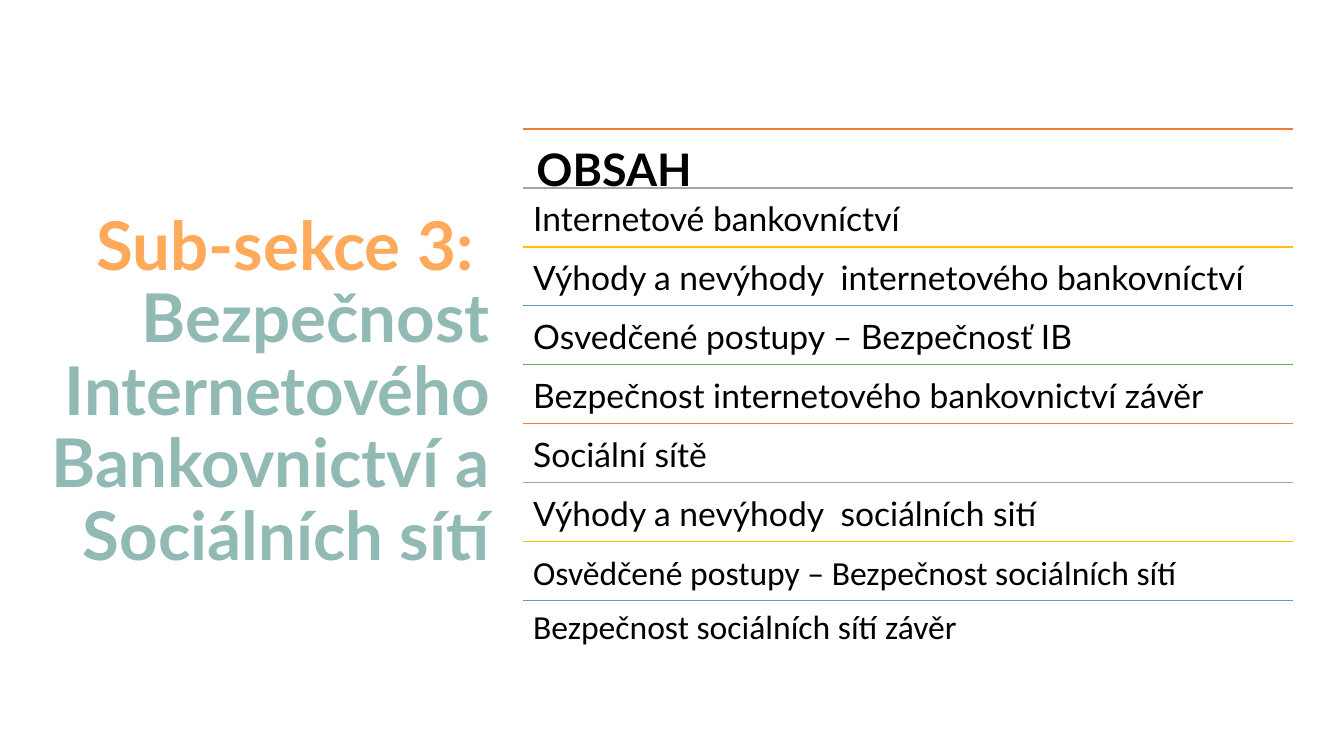
from lxml import etree
from pptx import Presentation
from pptx.dml.color import RGBColor
from pptx.enum.shapes import MSO_CONNECTOR
from pptx.enum.text import MSO_ANCHOR, MSO_AUTO_SIZE, PP_ALIGN
from pptx.oxml.ns import qn
from pptx.util import Inches, Pt

STRAIGHT = MSO_CONNECTOR.STRAIGHT
TOP, MIDDLE = MSO_ANCHOR.TOP, MSO_ANCHOR.MIDDLE
NO_FIT = MSO_AUTO_SIZE.NONE
LEFT, RIGHT = PP_ALIGN.LEFT, PP_ALIGN.RIGHT
TITLE_ONLY = 5

ORANGE, SAGE, BLACK = "FFAA5A", "92BAB5", "000000"
RULE_COLOURS = ["ED7D31", "A5A5A5", "FFC000", "5B9BD5", "70AD47"]

# Contents rows: text, font, size, inset, line spacing
HEADING = ("OBSAH", "Lato", 32, 0.13, 1.0)
TOPICS = [
    ("Internetové bankovníctví", "Lato", 24, 0.1, 1.0),
    ("Výhody a nevýhody  internetového bankovníctví", "Lato", 24, 0.1, 1.0),
    ("Osvedčené postupy – Bezpečnosť IB", "Lato", 24, 0.1, 1.0),
    ("Bezpečnost internetového bankovnictví závěr", "Lato", 24, 0.1, 1.0),
    ("Sociální sítě", "Lato", 24, 0.1, 1.0),
    ("Výhody a nevýhody  sociálních sití", "Lato", 24, 0.1, 1.0),
    ("Osvědčené postupy – Bezpečnost sociálních sítí", "Calibri", 24, 0.1, 1.0),
    ("Bezpečnost sociálních sítí závěr", "Calibri", 24, 0.1, 0.9),
]
LIST_LEFT, LIST_TOP, LIST_WIDTH = 5.19, 1.28, 7.63
ROW_HEIGHT = 5.26 / len([HEADING] + TOPICS)


def colour(hex_text):
    return RGBColor.from_string(hex_text)


def apply(target, values):
    for name, value in values.items():
        setattr(target, name, value)


class SlideBuilder:
    def __init__(self, page):
        self.page = page

    def add_span(self, para, text, font, size, ink, bold=False):
        span = para.add_run()
        span.text = text
        apply(span.font, {"name": font, "size": Pt(size), "bold": bold})
        span.font.color.rgb = colour(ink)

    def title(self, lead, rest, left, top, width, height):
        box = self.page.shapes.title
        apply(box, {"left": Inches(left), "top": Inches(top),
                    "width": Inches(width), "height": Inches(height)})
        apply(box.text_frame, {"word_wrap": True, "auto_size": NO_FIT,
                               "vertical_anchor": MIDDLE})
        para = box.text_frame.paragraphs[0]
        apply(para, {"alignment": RIGHT, "line_spacing": 0.9})
        self.add_span(para, lead, "Lato", 48, ORANGE, True)
        para.add_line_break()
        self.add_span(para, rest, "Lato", 48, SAGE, True)

    def rule(self, left, top, width, ink):
        line = self.page.shapes.add_connector(
            STRAIGHT, Inches(left), Inches(top), Inches(left + width), Inches(top))
        line.line.color.rgb = colour(ink)
        line.line.width = Pt(1)
        etree.SubElement(line._element.spPr, qn("a:effectLst"))

    def row(self, entry, left, top, width, height, bold):
        text, font, size, inset, spacing = entry
        box = self.page.shapes.add_textbox(
            Inches(left), Inches(top), Inches(width), Inches(height))
        margins = ("margin_left", "margin_top", "margin_right", "margin_bottom")
        apply(box.text_frame, dict.fromkeys(margins, Inches(inset)))
        apply(box.text_frame, {"word_wrap": True, "auto_size": NO_FIT,
                               "vertical_anchor": TOP})
        para = box.text_frame.paragraphs[0]
        apply(para, {"alignment": LEFT, "line_spacing": spacing})
        self.add_span(para, text, font, size, BLACK, bold)


def main():
    deck = Presentation()
    apply(deck, {"slide_width": Inches(13.33), "slide_height": Inches(7.5)})
    page = deck.slides.add_slide(deck.slide_layouts[TITLE_ONLY])
    builder = SlideBuilder(page)

    # Section title
    builder.title("Sub-sekce 3: ",
                  "Bezpečnost Internetového Bankovnictví a Sociálních sítí",
                  0.38, 0.85, 4.58, 6.11)

    # Contents list, each row under its coloured rule
    for index, entry in enumerate([HEADING] + TOPICS):
        top = LIST_TOP + index * ROW_HEIGHT
        builder.rule(LIST_LEFT, top, LIST_WIDTH,
                     RULE_COLOURS[index % len(RULE_COLOURS)])
        builder.row(entry, LIST_LEFT, top, LIST_WIDTH, ROW_HEIGHT,
                    bold=entry is HEADING)

    deck.save("out.pptx")


if __name__ == "__main__":
    main()
